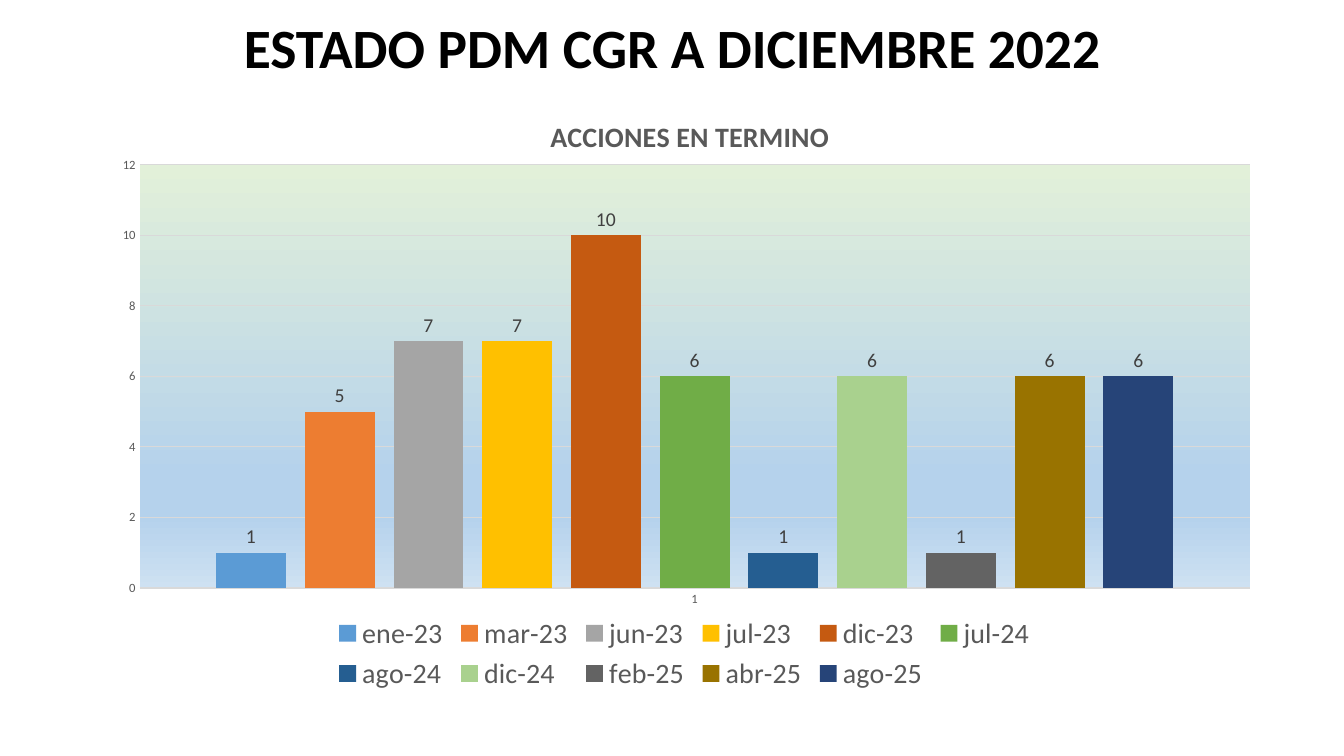
from lxml.etree import SubElement
from pptx import Presentation
from pptx.chart.data import CategoryChartData
from pptx.dml.color import RGBColor
from pptx.enum.chart import (XL_CHART_TYPE, XL_LABEL_POSITION,
                             XL_LEGEND_POSITION, XL_TICK_MARK)
from pptx.enum.text import MSO_ANCHOR, PP_ALIGN
from pptx.oxml import parse_xml
from pptx.oxml.ns import nsdecls, qn
from pptx.util import Cm, Pt

FONT = "Calibri"
COLORS = {"title": "000000", "text": "595959", "label": "404040", "grid": "D9D9D9"}

# Month: (actions, bar colour)
MONTHS = {
    "ene-23": (1, "5B9BD5"),
    "mar-23": (5, "ED7D31"),
    "jun-23": (7, "A5A5A5"),
    "jul-23": (7, "FFC000"),
    "dic-23": (10, "C55A11"),
    "jul-24": (6, "70AD47"),
    "ago-24": (1, "255E91"),
    "dic-24": (6, "A9D18E"),
    "feb-25": (1, "636363"),
    "abr-25": (6, "997300"),
    "ago-25": (6, "264478"),
}
# Plot background: (percent, colour), from top to bottom
STOPS = [(0, "E2F0D9"), (74, "B5D2EC"), (83, "B5D2EC"), (100, "CEE1F2")]


def style(font, size, color, bold=False):
    font.name = FONT
    font.size = Pt(size)
    font.bold = bold
    font.color.rgb = RGBColor.from_string(color)


def add_title(slide, text):
    box = slide.shapes.add_textbox(Cm(2.34), Cm(0.36), Cm(29.21), Cm(1.85))
    frame = box.text_frame
    frame.word_wrap = True
    frame.vertical_anchor = MSO_ANCHOR.MIDDLE
    frame.text = text
    para = frame.paragraphs[0]
    para.alignment = PP_ALIGN.CENTER
    para.line_spacing = 0.9
    style(para.runs[0].font, 39.6, COLORS["title"], True)


def set_layout(parent, index, **values):
    """Place a chart part by fractions of the chart size."""
    for old in parent.findall(qn("c:layout")):
        parent.remove(old)
    layout = parse_xml(f"<c:layout {nsdecls('c')}/>")
    manual = SubElement(layout, qn("c:manualLayout"))
    for tag, value in values.items():
        SubElement(manual, qn(f"c:{tag}")).set("val", str(value))
    parent.insert(index, layout)


def fill_plot(plot):
    """Give the plot area its gradient."""
    stops = "".join(f'<a:gs pos="{pos * 1000}"><a:srgbClr val="{color}"/></a:gs>'
                    for pos, color in STOPS)
    plot.append(parse_xml(
        f"<c:spPr {nsdecls('c', 'a')}><a:gradFill><a:gsLst>{stops}</a:gsLst>"
        '<a:lin ang="5400000" scaled="0"/></a:gradFill>'
        "<a:ln><a:noFill/></a:ln></c:spPr>"))


def set_line(line):
    line.color.rgb = RGBColor.from_string(COLORS["grid"])
    line.width = Pt(0.75)


def set_axes(chart):
    for axis in (chart.category_axis, chart.value_axis):
        axis.major_tick_mark = axis.minor_tick_mark = XL_TICK_MARK.NONE
        style(axis.tick_labels.font, 9, COLORS["text"])
    set_line(chart.category_axis.format.line)
    value = chart.value_axis
    value.minimum_scale, value.maximum_scale, value.major_unit = 0, 12, 2
    value.format.line.fill.background()
    value.has_major_gridlines = True
    set_line(value.major_gridlines.format.line)


def set_bars(plot):
    plot.gap_width, plot.overlap = 219, -27
    plot.vary_by_categories = False
    for series in plot.series:
        fill = series.format.fill
        fill.solid()
        fill.fore_color.rgb = RGBColor.from_string(MONTHS[series.name][1])
        labels = series.data_labels
        labels.show_value = True
        labels.position = XL_LABEL_POSITION.OUTSIDE_END
        style(labels.font, 14, COLORS["label"])


def add_chart(slide, title):
    data = CategoryChartData()
    data.categories = ["1"]
    for month, (count, _) in MONTHS.items():
        data.add_series(month, [count])
    chart = slide.shapes.add_chart(
        XL_CHART_TYPE.COLUMN_CLUSTERED,
        Cm(2.64), Cm(2.21), Cm(29.21), Cm(15.34), data).chart
    style(chart.font, 10, COLORS["title"])

    # Heading
    chart.has_title = True
    frame = chart.chart_title.text_frame
    frame.text = title
    style(frame.paragraphs[0].runs[0].font, 20, COLORS["text"], True)
    set_layout(chart.element.find(".//" + qn("c:title")), 1,
               xMode="edge", yMode="edge", x=0.38, y=0.04)

    # Legend
    chart.has_legend = True
    chart.legend.position = XL_LEGEND_POSITION.BOTTOM
    chart.legend.include_in_layout = False
    style(chart.legend.font, 20, COLORS["text"])

    # Plot
    set_axes(chart)
    set_bars(chart.plots[0])
    area = chart.element.find(".//" + qn("c:plotArea"))
    set_layout(area, 0, layoutTarget="inner", xMode="edge", yMode="edge",
               x=0.03, y=0.127, w=0.958, h=0.695)
    fill_plot(area)


def main():
    deck = Presentation()
    deck.slide_width, deck.slide_height = Cm(33.87), Cm(19.05)
    slide = deck.slides.add_slide(deck.slide_layouts[6])
    add_title(slide, "ESTADO PDM CGR A DICIEMBRE 2022")
    add_chart(slide, "ACCIONES EN TERMINO")
    deck.save("out.pptx")


if __name__ == "__main__":
    main()
